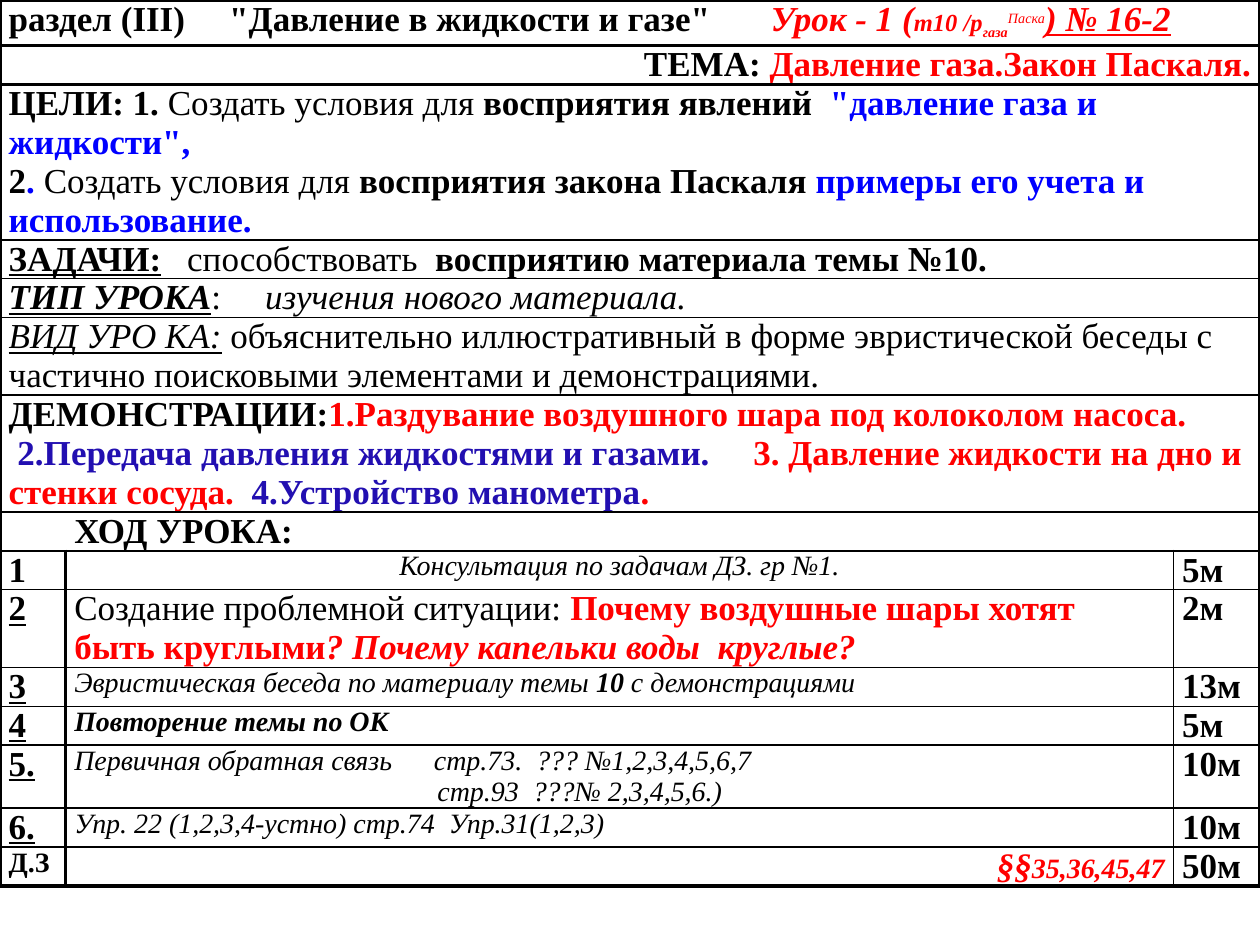
from lxml import etree
from pptx import Presentation
from pptx.dml.color import RGBColor
from pptx.enum import text
from pptx.oxml import ns
from pptx.util import Pt

BLACK = RGBColor(0x00, 0x00, 0x00)
RED = RGBColor(0xFF, 0x00, 0x00)
BLUE = RGBColor(0x00, 0x00, 0xFF)
INDIGO = RGBColor(0x22, 0x0F, 0xB1)
FONT = "Times New Roman"
SIZE = 20
SMALL = 16
TINY = 14
OUTER, MEDIUM, THIN = 2.25, 1.5, 1
LEFT, CENTER, RIGHT = text.PP_ALIGN.LEFT, text.PP_ALIGN.CENTER, text.PP_ALIGN.RIGHT

COLUMNS = [37.5, 633, 49.5]
LINE = 19.5
ROWS = [26, LINE, 2 * LINE, LINE, LINE, 2 * LINE, 3 * LINE, LINE,
        LINE, 2 * LINE, LINE, LINE, 36, LINE, LINE]
RULES = [OUTER, MEDIUM, MEDIUM, THIN, THIN, THIN, MEDIUM, MEDIUM, MEDIUM,
         THIN, THIN, THIN, THIN, THIN, MEDIUM, OUTER]


def run(words, style="", color=BLACK, size=None, shift=0):
    return words, style, color, size, shift


def line(*runs, align=LEFT, size=SIZE, tabs=()):
    return runs, align, size, tabs


OUTLINE = [
    [line(run('раздел (III)\t"Давление в жидкости и газе"\t', "b"),
          run("Урок - 1 (", "bi", RED), run("т10 /р", "bi", RED, TINY),
          run("газа", "bi", RED, TINY, -25000), run("Паска", "i", RED, TINY, 30000),
          run(") № 16-2", "biu", RED), tabs=(126, 435.5))],
    [line(run("ТЕМА:", "b"), run(" Давление газа.Закон Паскаля.", "b", RED), align=RIGHT)],
    [line(run("ЦЕЛИ: 1. ", "b"), run("Создать условия для "),
          run("восприятия явлений  ", "b"), run('"давление газа и жидкости",', "b", BLUE)),
     line(run("2", "b"), run(". ", "b", BLUE), run("Создать условия для "),
          run("восприятия закона Паскаля", "b"),
          run(" примеры его учета и использование.", "b", BLUE))],
    [line(run("ЗАДАЧИ:", "bu"), run("\tспособствовать "),
          run(" восприятию материала темы №10.", "b"), tabs=(102,))],
    [line(run("ТИП УРОКА", "biu"), run(":\t"), run("изучения нового материала.", "i"),
          tabs=(146.5,))],
    [line(run("ВИД УРО КА:", "iu"),
          run(" объяснительно иллюстративный в форме эвристической беседы с "
              "частично поисковыми элементами и демонстрациями."))],
    [line(run("ДЕМОНСТРАЦИИ:", "b"),
          run("1.Раздувание воздушного шара под колоколом насоса.", "b", RED)),
     line(run(" 2.Передача давления жидкостями и газами.\t", "b", INDIGO),
          run("3. Давление жидкости на дно и стенки сосуда.  ", "b", RED),
          run("4.Устройство манометра", "b", INDIGO), run(".", "b", RED), tabs=(425.5,))],
]

STEPS = [
    (run("1", "b"), "5м",
     [line(run("Консультация по задачам ДЗ. гр №1.", "i"), align=CENTER, size=SMALL)]),
    (run("2", "bu"), "2м",
     [line(run("Создание проблемной ситуации: "),
           run("Почему воздушные шары хотят быть круглыми", "b", RED),
           run("? Почему капельки воды  круглые?", "bi", RED))]),
    (run("3", "bu"), "13м",
     [line(run("Эвристическая беседа по материалу темы", "i"), run(" 10", "bi"),
           run(" с демонстрациями", "i"), size=SMALL)]),
    (run("4", "bu"), "5м", [line(run("Повторение темы по ОК", "bi"), size=SMALL)]),
    (run("5.", "bu"), "10м",
     [line(run("Первичная обратная связь\tстр.73.  ??? №1,2,3,4,5,6,7", "i"),
           size=SMALL, tabs=(205.5,)),
      line(run("\tстр.93  ???№ 2,3,4,5,6.)", "i"), size=SMALL, tabs=(207.5,))]),
    (run("6.", "bu"), "10м",
     [line(run("Упр. 22 (1,2,3,4-устно) стр.74  Упр.31(1,2,3)", "i"), size=SMALL)]),
    (run("Д.З", "b", size=SMALL), "50м",
     [line(run("§§", "bi", RED), run("35,36,45,47", "bi", RED, SMALL), align=RIGHT)]),
]


def set_tabs(paragraph, positions):
    tab_list = etree.Element(ns.qn("a:tabLst"))
    for position in positions:
        etree.SubElement(tab_list, ns.qn("a:tab"), pos=str(Pt(position)), algn="l")
    properties = paragraph._p.get_or_add_pPr()
    default_font = properties.find(ns.qn("a:defRPr"))
    default_font.addprevious(tab_list)


def write(cell, lines):
    for number, (runs, align, size, tabs) in enumerate(lines):
        frame = cell.text_frame
        paragraph = frame.add_paragraph() if number else frame.paragraphs[0]
        paragraph.alignment = align
        paragraph.font.name = FONT
        paragraph.font.size = Pt(size)
        if tabs:
            set_tabs(paragraph, tabs)
        for words, style, color, own_size, shift in runs:
            piece = paragraph.add_run()
            piece.text = words
            font = piece.font
            font.bold, font.italic, font.underline = (mark in style for mark in "biu")
            font.color.rgb = color
            if own_size:
                font.size = Pt(own_size)
            if shift:
                font._element.set("baseline", str(shift))


def set_borders(cell, widths):
    properties = cell._tc.get_or_add_tcPr()
    for position, (side, width) in enumerate(zip("LRTB", widths)):
        border = etree.Element(ns.qn(f"a:ln{side}"), w=str(Pt(width)))
        if width:
            fill = etree.SubElement(border, ns.qn("a:solidFill"))
            etree.SubElement(fill, ns.qn("a:srgbClr"), val=str(BLACK))
        else:
            etree.SubElement(border, ns.qn("a:noFill"))
        properties.insert(position, border)


def format_grid(table):
    heading = len(OUTLINE)
    for row in range(len(ROWS)):
        dividers = (MEDIUM, THIN) if row > heading else (0, 0)
        verticals = [OUTER, *dividers, OUTER]
        for column in range(len(COLUMNS)):
            cell = table.cell(row, column)
            cell.margin_left = cell.margin_right = Pt(5)
            cell.margin_top = cell.margin_bottom = 0
            cell.fill.background()
            right = OUTER if cell.is_merge_origin else verticals[column + 1]
            set_borders(cell, (verticals[column], right, RULES[row], RULES[row + 1]))


def fill_outline(table):
    for row, lines in enumerate(OUTLINE):
        table.cell(row, 0).merge(table.cell(row, len(COLUMNS) - 1))
        write(table.cell(row, 0), lines)


def fill_schedule(table, first_row):
    write(table.cell(first_row, 1), [line(run("ХОД УРОКА:", "b"))])
    for row, (number, duration, activity) in enumerate(STEPS, first_row + 1):
        write(table.cell(row, 0), [line(number)])
        write(table.cell(row, 1), activity)
        write(table.cell(row, 2), [line(run(duration, "b"))])


def add_lesson_plan(slide, left, top, width, height):
    frame = slide.shapes.add_table(len(ROWS), len(COLUMNS), Pt(left), Pt(top),
                                   Pt(width), Pt(height))
    table = frame.table
    table.first_row = table.horz_banding = False
    for column, column_width in zip(table.columns, COLUMNS):
        column.width = Pt(column_width)
    for row, row_height in zip(table.rows, ROWS):
        row.height = Pt(row_height)
    frame.height = Pt(height)
    fill_outline(table)
    fill_schedule(table, len(OUTLINE))
    format_grid(table)


def main():
    deck = Presentation()
    deck.slide_width, deck.slide_height = Pt(720), Pt(540)
    slide = deck.slides.add_slide(deck.slide_layouts[6])
    add_lesson_plan(slide, 0, 0, 720, 544)
    deck.save("out.pptx")


if __name__ == "__main__":
    main()
